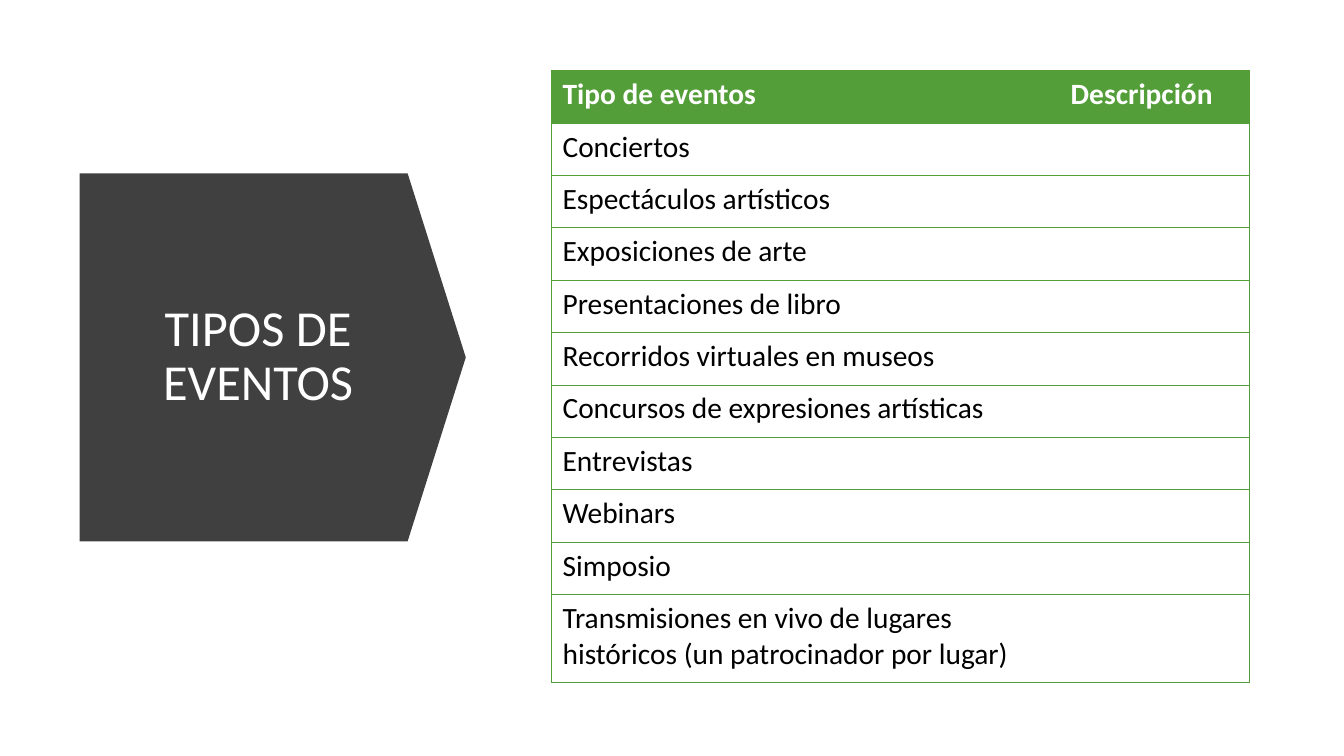
from lxml import etree
from pptx import Presentation
from pptx import util as u
from pptx.dml.color import RGBColor
from pptx.enum import shapes, text
from pptx.oxml.ns import qn

COLORS = {"green": "549E39", "dark": "404040", "white": "FFFFFF", "black": "000000"}
FONT = "Calibri"
HEADERS = ["Tipo de eventos", "Descripción"]
EVENTS = [
    "Conciertos",
    "Espectáculos artísticos",
    "Exposiciones de arte",
    "Presentaciones de libro",
    "Recorridos virtuales en museos",
    "Concursos de expresiones artísticas",
    "Entrevistas",
    "Webinars",
    "Simposio",
    "Transmisiones en vivo de lugares históricos (un patrocinador por lugar)",
]


def format_run(run, size, color, bold=False):
    run.font.name = FONT
    run.font.size = u.Pt(size)
    run.font.bold = bold
    run.font.color.rgb = RGBColor.from_string(COLORS[color])


def set_borders(cell, visible_sides):
    """Draw green lines on the given sides (of L, R, T, B) and none on the others."""
    properties = cell._tc.get_or_add_tcPr()
    for side in "LRTB":
        line = etree.SubElement(properties, qn(f"a:ln{side}"), w=str(u.Pt(0.5)))
        if side in visible_sides:
            fill = etree.SubElement(line, qn("a:solidFill"))
            etree.SubElement(fill, qn("a:srgbClr"), val=COLORS["green"])
        else:
            etree.SubElement(line, qn("a:noFill"))


prs = Presentation()
prs.slide_width = u.Inches(13.33)
prs.slide_height = u.Inches(7.5)
slide = prs.slides.add_slide(prs.slide_layouts[5])

# Arrow pointing at the table, placed behind the title
arrow = slide.shapes.add_shape(
    shapes.MSO_SHAPE.DOWN_ARROW, u.Inches(0.88), u.Inches(1.63), u.Inches(3.65), u.Inches(3.83)
)
arrow.rotation = 270
arrow.adjustments[0] = 1
arrow.adjustments[1] = 0.158
arrow.shadow.inherit = False
arrow.fill.solid()
arrow.fill.fore_color.rgb = RGBColor.from_string(COLORS["dark"])
arrow.line.fill.background()

title = slide.shapes.title
title.left, title.top = u.Inches(1.12), u.Inches(2.15)
title.width, title.height = u.Inches(2.88), u.Inches(2.79)
title.text_frame.text = "TIPOS DE EVENTOS"
title.text_frame.word_wrap = True
title.text_frame.vertical_anchor = text.MSO_ANCHOR.MIDDLE
heading = title.text_frame.paragraphs[0]
heading.alignment = text.PP_ALIGN.CENTER
heading.line_spacing = 0.9
format_run(heading.runs[0], 36, "white")
arrow._element.addnext(title._element)

# Table of event types
rows = [HEADERS] + [[event, ""] for event in EVENTS]
events_table = slide.shapes.add_table(
    len(rows), len(HEADERS), u.Inches(5.47), u.Inches(0.7), u.Inches(6.92), u.Inches(6.09)
).table
events_table.horz_banding = False
for column, width in zip(events_table.columns, [5.04, 1.88]):
    column.width = u.Inches(width)

for row_index, labels in enumerate(rows):
    is_header = row_index == 0
    is_last = row_index == len(rows) - 1
    events_table.rows[row_index].height = u.Inches(0.87 if is_last else 0.52)
    for column_index, label in enumerate(labels):
        cell = events_table.cell(row_index, column_index)
        set_borders(cell, "TB" + "LR"[column_index])
        if is_header:
            cell.fill.solid()
            cell.fill.fore_color.rgb = RGBColor.from_string(COLORS["green"])
        else:
            cell.fill.background()
        cell.margin_left = cell.margin_right = u.Inches(0.11)
        cell.margin_top = cell.margin_bottom = u.Inches(0.06)
        cell.text_frame.text = label
        for run in cell.text_frame.paragraphs[0].runs:
            format_run(run, 21, "white" if is_header else "black", bold=is_header)

prs.save("out.pptx")
